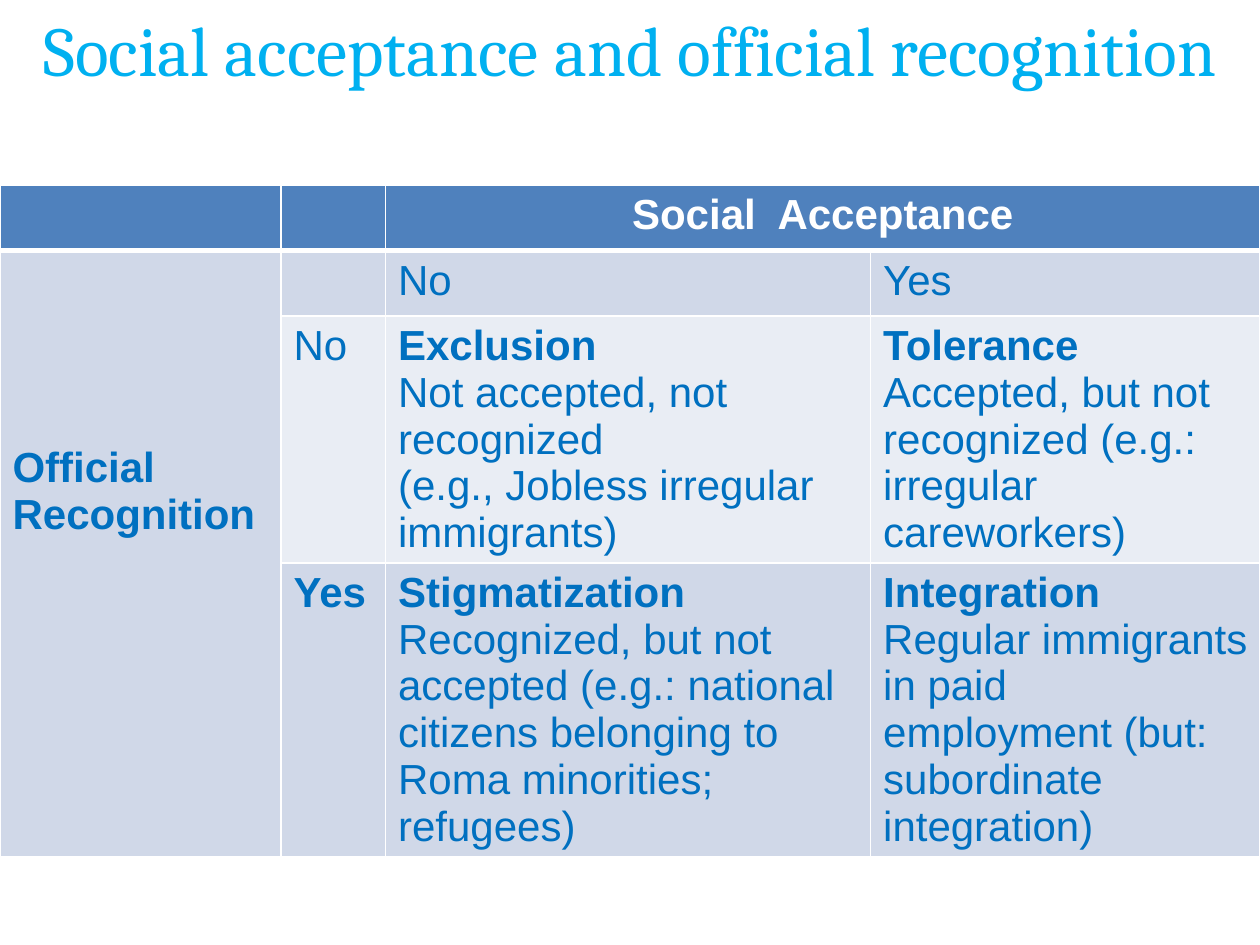
"""Build a slide with a matrix of social acceptance and official recognition."""
import lxml.etree
import pptx
import pptx.dml.color
import pptx.enum.text
import pptx.oxml.ns
import pptx.util
from pptx.util import Inches


def color(value):
    """Turn a hex string into a colour."""
    return pptx.dml.color.RGBColor.from_string(value)


def write(para, text, size=24, font="Arial", fill="0070C0", bold=False, align=None):
    """Add formatted text to a paragraph."""
    para.alignment = align
    span = para.add_run()
    span.text = text
    span.font.size = pptx.util.Pt(size)
    span.font.name = font
    span.font.bold = bold
    span.font.color.rgb = color(fill)


CENTER = pptx.enum.text.PP_ALIGN.CENTER
HEADER, DARK, LIGHT = "4F81BD", "D0D8E8", "E9EDF4"

deck = pptx.Presentation()
deck.slide_width, deck.slide_height = Inches(10), Inches(7.5)
page = deck.slides.add_slide(deck.slide_layouts[5])

title = page.shapes.title
title.left, title.top, title.width, title.height = 0, 0, Inches(10), Inches(1.39)
title.text_frame.word_wrap = True
title.text_frame.auto_size = pptx.enum.text.MSO_AUTO_SIZE.NONE
title.text_frame.vertical_anchor = pptx.enum.text.MSO_ANCHOR.TOP
write(title.text_frame.paragraphs[0], "Social acceptance and official recognition",
      size=40, font="Cambria", fill="00B0F0", align=CENTER)

matrix = page.shapes.add_table(4, 4, 0, Inches(1.47), Inches(10), Inches(5.63)).table
matrix.horz_banding = False
matrix.first_row = False
for column, width in zip(matrix.columns, [2.23, 0.83, 3.85, 3.09]):
    column.width = Inches(width)
for row, height in zip(matrix.rows, [0.52, 0.52, 1.91, 2.17]):
    row.height = Inches(height)

for row_index, fill in enumerate([HEADER, DARK, LIGHT, DARK]):
    for column_index in range(4):
        cell = matrix.cell(row_index, column_index)
        cell.fill.solid()
        cell.fill.fore_color.rgb = color(DARK if row_index and column_index == 0 else fill)
        properties = cell._tc.get_or_add_tcPr()
        for position, side in enumerate("LRTB"):
            thick = (row_index, side) in [(0, "B"), (1, "T")]
            line = lxml.etree.Element(pptx.oxml.ns.qn(f"a:ln{side}"),
                                      w=str(pptx.util.Pt(3 if thick else 1)))
            solid = lxml.etree.SubElement(line, pptx.oxml.ns.qn("a:solidFill"))
            lxml.etree.SubElement(solid, pptx.oxml.ns.qn("a:srgbClr"), val="FFFFFF")
            properties.insert(position, line)

matrix.cell(0, 2).merge(matrix.cell(0, 3))
matrix.cell(1, 0).merge(matrix.cell(3, 0))
matrix.cell(1, 0).margin_top = Inches(1.54)

write(matrix.cell(0, 2).text_frame.paragraphs[0], "Social  Acceptance",
      fill="FFFFFF", bold=True, align=CENTER)

labels = [
    (1, 0, "Official Recognition", True),
    (1, 2, "No", False),
    (1, 3, "Yes", False),
    (2, 1, "No", False),
    (3, 1, "Yes", True),
]
for row_index, column_index, text, bold in labels:
    write(matrix.cell(row_index, column_index).text_frame.paragraphs[0], text, bold=bold)

outcomes = {
    (2, 2): ["Exclusion", "Not accepted, not recognized",
             "(e.g., Jobless irregular immigrants)"],
    (2, 3): ["Tolerance", "Accepted, but not recognized (e.g.: irregular careworkers)"],
    (3, 2): ["Stigmatization", "Recognized, but not accepted (e.g.: national citizens "
             "belonging to Roma minorities; refugees)"],
    (3, 3): ["Integration", "Regular immigrants in paid employment "
             "(but: subordinate integration)"],
}
for place, (heading, *details) in outcomes.items():
    frame = matrix.cell(*place).text_frame
    write(frame.paragraphs[0], heading, bold=True)
    for detail in details:
        write(frame.add_paragraph(), detail)

deck.save("out.pptx")
